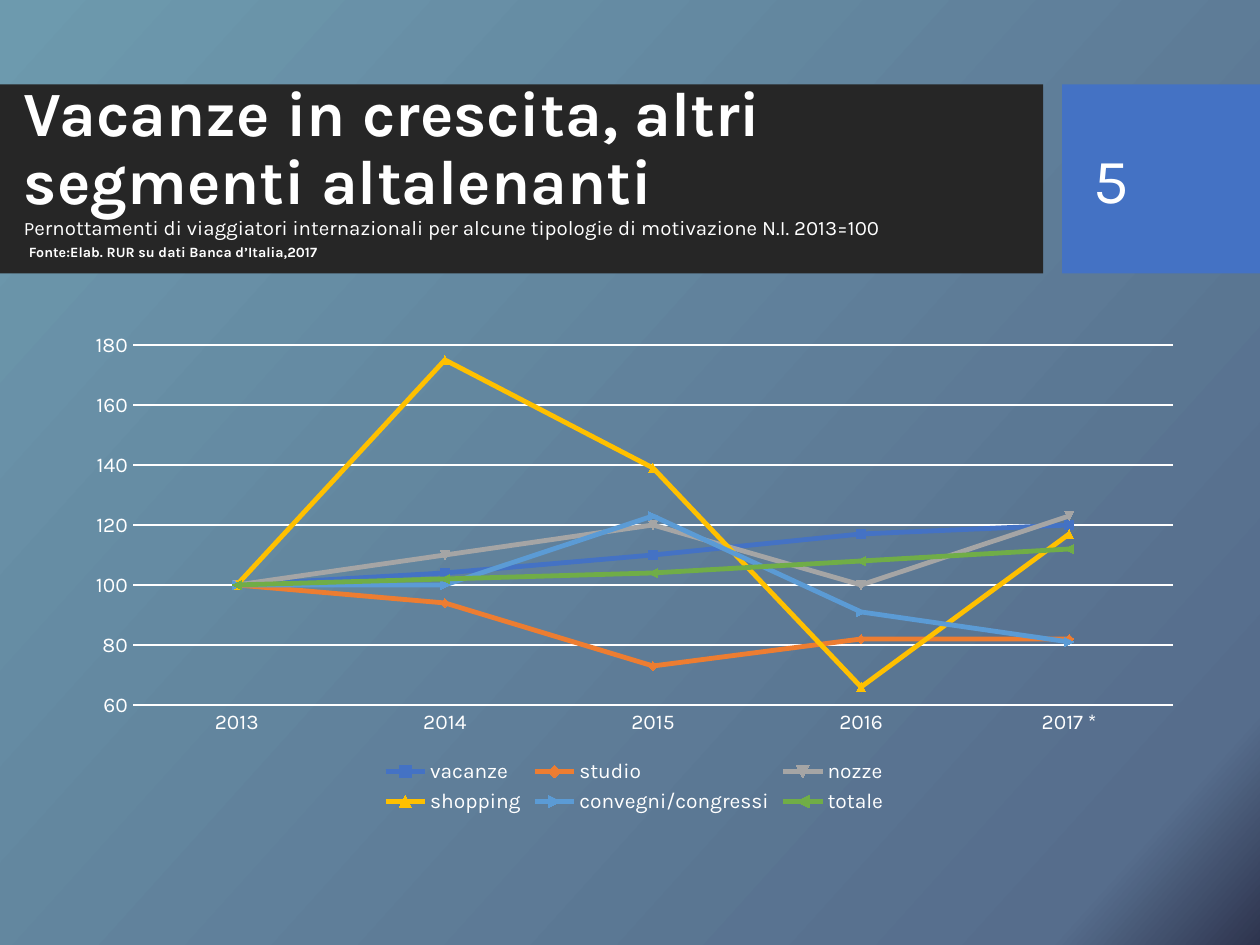
from copy import deepcopy
from pptx import Presentation
from pptx.chart.data import CategoryChartData
from pptx.dml.color import RGBColor
from pptx.enum.chart import XL_CHART_TYPE, XL_LEGEND_POSITION, XL_TICK_MARK
from pptx.enum.shapes import MSO_SHAPE
from pptx.enum.text import MSO_ANCHOR, MSO_AUTO_SIZE, PP_ALIGN
from pptx.util import Inches, Pt

LINE, BOTTOM, NO_TICK = XL_CHART_TYPE.LINE, XL_LEGEND_POSITION.BOTTOM, XL_TICK_MARK.NONE
RECTANGLE, MIDDLE, LEFT, NO_FIT = MSO_SHAPE.RECTANGLE, MSO_ANCHOR.MIDDLE, PP_ALIGN.LEFT, MSO_AUTO_SIZE.NONE

THEME = {
    "font": "Karla", "text": "FFFFFF", "band": "262626", "accent": "4472C4",
    "backdrop": [(0, "6D9AAE"), (0.9, "566D8C"), (1, "2E344E")],
    "title": 36, "lead": 10.8, "subtitle": 11.7, "source": 8.1, "chart": 12,
}
WIDTH, HEIGHT = Inches(10), Inches(7.5)
BAND_TOP, BAND_HEIGHT = Inches(0.67), Inches(1.5)
BAND_WIDTH, NUMBER_LEFT = Inches(8.28), Inches(8.43)


def style_font(font, size, bold=False):
    for name, value in {"name": THEME["font"], "size": Pt(size), "bold": bold}.items():
        setattr(font, name, value)
    font.color.rgb = RGBColor.from_string(THEME["text"])


def place(shape, left, top, width, height):
    bounds = {"left": left, "top": top, "width": width, "height": height}
    for name, value in bounds.items():
        setattr(shape, name, value)
    frame_format = {"word_wrap": True, "auto_size": NO_FIT, "vertical_anchor": MIDDLE}
    for name, value in frame_format.items():
        setattr(shape.text_frame, name, value)
    para = shape.text_frame.paragraphs[0]
    para.alignment = LEFT
    return para


deck = Presentation()
deck.slide_width, deck.slide_height = WIDTH, HEIGHT
page = deck.slides.add_slide(deck.slide_layouts[5])

backdrop = page.background.fill
backdrop.gradient()
backdrop.gradient_angle = 360 - 42
stop_list = page.element.xpath(".//a:gsLst")[0]
stop_list.append(deepcopy(stop_list[0]))
for stop, (position, color) in zip(backdrop.gradient_stops, THEME["backdrop"]):
    stop.position = position
    stop.color.rgb = RGBColor.from_string(color)

for left, width, color in [(0, BAND_WIDTH, "band"), (NUMBER_LEFT, WIDTH - NUMBER_LEFT, "accent")]:
    band = page.shapes.add_shape(RECTANGLE, left, BAND_TOP, width, BAND_HEIGHT)
    band.shadow.inherit = False
    band.fill.solid()
    band.fill.fore_color.rgb = RGBColor.from_string(THEME[color])
    band.line.fill.background()

title = page.shapes.title
page.shapes._spTree.append(title._element)
para = place(title, Inches(0.09), Inches(0.72), Inches(8.11), Inches(1.29))
para.line_spacing = 0.9
for text, size, bold, ends_line in [
    ("Vacanze in crescita, altri segmenti altalenanti", "title", True, True),
    ("P", "lead", False, False),
    ("ernottamenti di viaggiatori internazionali per alcune tipologie di motivazione N.I. 2013=100",
     "subtitle", False, True),
    (" ", "subtitle", False, False),
    ("Fonte:Elab. RUR su dati Banca d’Italia,2017", "source", True, False),
]:
    span = para.add_run()
    span.text = text
    style_font(span.font, THEME[size], bold)
    if ends_line:
        para.add_line_break()

number = page.shapes.add_textbox(0, 0, 0, 0)
para = place(number, Inches(8.58), Inches(0.82), Inches(1.27), Inches(1.19))
span = para.add_run()
span.text = "5"
style_font(span.font, THEME["title"])

SERIES = [
    ("vacanze", "4472C4", (100, 104, 110, 117, 120)),
    ("studio", "ED7D31", (100, 94, 73, 82, 82)),
    ("nozze", "A5A5A5", (100, 110, 120, 100, 123)),
    ("shopping", "FFC000", (100, 175, 139, 66, 117)),
    ("convegni/congressi", "5B9BD5", (100, 100, 123, 91, 81)),
    ("totale", "70AD47", (100, 102, 104, 108, 112)),
]
data = CategoryChartData()
data.categories = ["2013", "2014", "2015", "2016", "2017 *"]
for name, color, values in SERIES:
    data.add_series(name, values)
chart = page.shapes.add_chart(
    LINE, Inches(0.58), Inches(2.56), Inches(8.91), Inches(3.94), data).chart
chart.has_title = False
chart.has_legend = True
chart.legend.position = BOTTOM
chart.legend.include_in_layout = False
chart.plots[0].vary_by_categories = False
years, index = chart.category_axis, chart.value_axis
for font in (chart.font, chart.legend.font, years.tick_labels.font, index.tick_labels.font):
    style_font(font, THEME["chart"])
for axis in (years, index):
    axis.major_tick_mark = axis.minor_tick_mark = NO_TICK
for name, value in {"minimum_scale": 60, "maximum_scale": 180, "major_unit": 20}.items():
    setattr(index, name, value)
index.format.line.fill.background()
strokes = [(years.format.line, THEME["text"], 1),
           (index.major_gridlines.format.line, THEME["text"], 0.75)]
for series, (name, color, values) in zip(chart.plots[0].series, SERIES):
    series.smooth = False
    series.marker.style = None
    strokes.append((series.format.line, color, 2.75))
for line, color, width in strokes:
    line.color.rgb = RGBColor.from_string(color)
    line.width = Pt(width)

deck.save("out.pptx")
